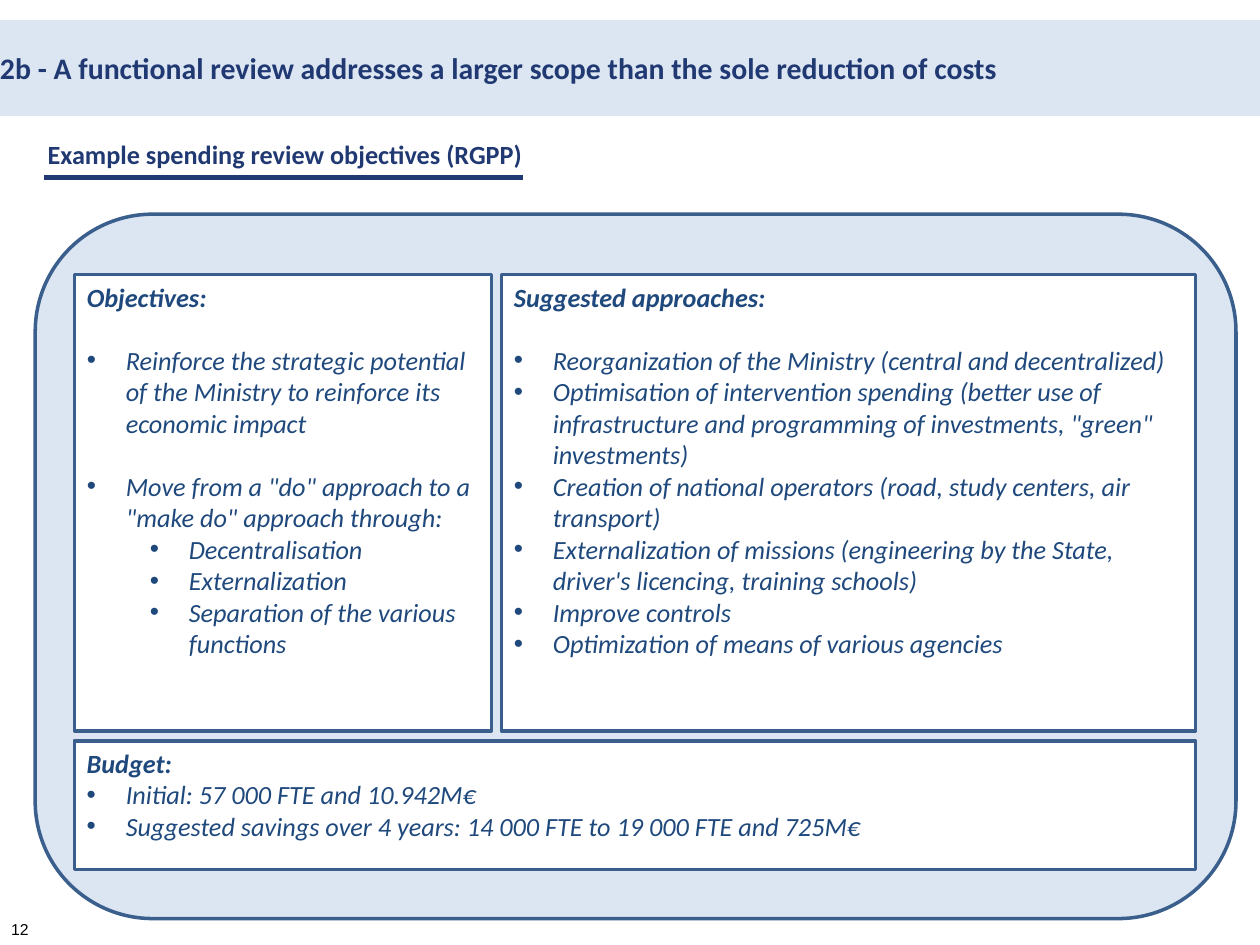
from lxml import etree
from pptx import Presentation
from pptx.dml.color import RGBColor
from pptx.enum.shapes import MSO_CONNECTOR, MSO_SHAPE
from pptx.enum.text import MSO_ANCHOR, PP_ALIGN
from pptx.oxml.ns import qn
from pptx.util import Inches, Pt

RECTANGLE = MSO_SHAPE.RECTANGLE
ROUNDED = MSO_SHAPE.ROUNDED_RECTANGLE
STRAIGHT = MSO_CONNECTOR.STRAIGHT
TOP, MIDDLE, BOTTOM = MSO_ANCHOR.TOP, MSO_ANCHOR.MIDDLE, MSO_ANCHOR.BOTTOM
LEFT = PP_ALIGN.LEFT

NAVY = RGBColor(0x21, 0x39, 0x72)
BLUE = RGBColor(0x1F, 0x49, 0x7D)
BORDER = RGBColor(0x3A, 0x5F, 0x8C)
PALE = RGBColor(0xDC, 0xE6, 0xF2)
WHITE = RGBColor(0xFF, 0xFF, 0xFF)
BLACK = RGBColor(0x00, 0x00, 0x00)

BODY_SIZE = 15
BLANK_LINE = Pt(18)
HANGING = 0.31
LEVEL_STEP = 0.5

# Panel grid
PANEL_LEFT, PANEL_TOP = 0.59, 2.18
PANEL_WIDTH, GAP = 8.9, 0.08
OBJECTIVES_WIDTH, UPPER_HEIGHT, BUDGET_HEIGHT = 3.31, 3.62, 1.02

# Each bullet: text, level, whether a line is left free after it
OBJECTIVES = [
    ("Reinforce the strategic potential of the Ministry to reinforce its economic impact", 0, True),
    ('Move from a "do" approach to a "make do" approach through:', 0, False),
    ("Decentralisation", 1, False),
    ("Externalization", 1, False),
    ("Separation of the various functions", 1, False),
]
APPROACHES = [(text, 0, False) for text in (
    "Reorganization of the Ministry (central and decentralized)",
    "Optimisation of intervention spending (better use of infrastructure and "
    'programming of investments, "green" investments)',
    "Creation of national operators (road, study centers, air transport)",
    "Externalization of missions (engineering by the State, driver's licencing, training schools)",
    "Improve controls",
    "Optimization of means of various agencies",
)]
BUDGET = [(text, 0, False) for text in (
    "Initial: 57 000 FTE and 10.942M€",
    "Suggested savings over 4 years: 14 000 FTE to 19 000 FTE and 725M€",
)]


class SlideBuilder:
    def __init__(self, slide):
        self.slide = slide

    def set_text(self, paragraph, text, size, color, bold=False, italic=False, font="Calibri"):
        paragraph.text = text
        paragraph.alignment = LEFT
        for run in paragraph.runs:
            run.font.name = font
            run.font.size = Pt(size)
            run.font.bold = bold
            run.font.italic = italic
            run.font.color.rgb = color

    def box(self, kind, left, top, width, height, fill, border=None):
        shape = self.slide.shapes.add_shape(
            kind, Inches(left), Inches(top), Inches(width), Inches(height))
        shape.shadow.inherit = False
        shape.fill.solid()
        shape.fill.fore_color.rgb = fill
        if border is None:
            shape.line.fill.background()
        else:
            shape.line.color.rgb = border
            shape.line.width = Pt(2)
        return shape

    def title_band(self, text, left, top, width, height):
        frame = self.box(RECTANGLE, left, top, width, height, PALE).text_frame
        frame.margin_left = frame.margin_right = 0
        frame.margin_top = frame.margin_bottom = 0
        frame.vertical_anchor = MIDDLE
        self.set_text(frame.paragraphs[0], text, 17, NAVY, bold=True)

    def label(self, text, left, top, width, height, size, color, anchor=TOP, **style):
        frame = self.slide.shapes.add_textbox(
            Inches(left), Inches(top), Inches(width), Inches(height)).text_frame
        frame.word_wrap = False
        frame.vertical_anchor = anchor
        self.set_text(frame.paragraphs[0], text, size, color, **style)

    def rule(self, left, right, top):
        line = self.slide.shapes.add_connector(
            STRAIGHT, Inches(left), Inches(top), Inches(right), Inches(top))
        line.line.color.rgb = NAVY
        line.line.width = Pt(3)
        etree.SubElement(line._element.spPr, qn("a:effectLst"))

    def bullet(self, paragraph, level):
        """Give the paragraph a round bullet with a hanging indent."""
        paragraph.level = level
        properties = paragraph._p.get_or_add_pPr()
        properties.set("marL", str(Inches(HANGING + level * LEVEL_STEP)))
        properties.set("indent", str(-Inches(HANGING)))
        etree.SubElement(properties, qn("a:buFont"), typeface="Arial")
        etree.SubElement(properties, qn("a:buChar"), char="•")

    def panel(self, heading, bullets, left, top, width, height, spaced_heading=True):
        frame = self.box(RECTANGLE, left, top, width, height, WHITE, BORDER).text_frame
        frame.word_wrap = True
        frame.vertical_anchor = TOP
        first = frame.paragraphs[0]
        self.set_text(first, heading, BODY_SIZE, BLUE, bold=True, italic=True)
        if spaced_heading:
            first.space_after = BLANK_LINE
        for text, level, spaced in bullets:
            paragraph = frame.add_paragraph()
            self.set_text(paragraph, text, BODY_SIZE, BLUE, italic=True)
            if spaced:
                paragraph.space_after = BLANK_LINE
            self.bullet(paragraph, level)


def main():
    presentation = Presentation()
    presentation.slide_width = Inches(10)
    presentation.slide_height = Inches(7.5)
    builder = SlideBuilder(presentation.slides.add_slide(presentation.slide_layouts[6]))

    builder.title_band(
        "2b - A functional review addresses a larger scope than the sole reduction of costs",
        0, 0.16, 10, 0.76)
    builder.label("12", -0.01, 7.13, 0.48, 0.37, 9, BLACK, anchor=BOTTOM, font="Arial")
    builder.box(ROUNDED, 0.28, 1.7, 9.53, 5.59, PALE, BORDER)
    builder.label("Example spending review objectives (RGPP)",
                  0.28, 1.05, 4, 0.35, 15, NAVY, bold=True)
    builder.rule(0.35, 4.15, 1.41)

    approaches_offset = OBJECTIVES_WIDTH + GAP
    builder.panel("Objectives:", OBJECTIVES,
                  PANEL_LEFT, PANEL_TOP, OBJECTIVES_WIDTH, UPPER_HEIGHT)
    builder.panel("Suggested approaches:", APPROACHES,
                  PANEL_LEFT + approaches_offset, PANEL_TOP,
                  PANEL_WIDTH - approaches_offset, UPPER_HEIGHT)
    builder.panel("Budget:", BUDGET,
                  PANEL_LEFT, PANEL_TOP + UPPER_HEIGHT + GAP,
                  PANEL_WIDTH, BUDGET_HEIGHT, spaced_heading=False)

    presentation.save("out.pptx")


if __name__ == "__main__":
    main()
